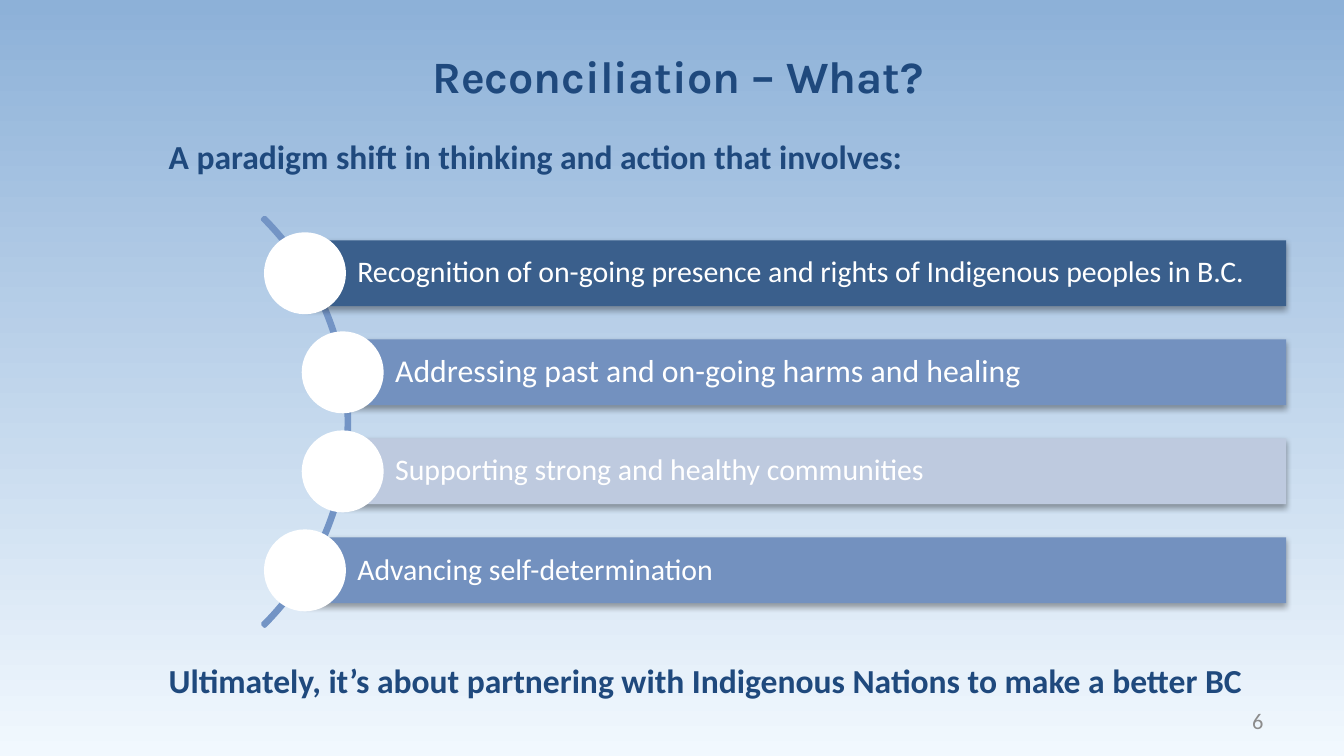
from dataclasses import dataclass

import lxml.etree
import pptx
import pptx.dml.color
import pptx.enum.shapes
import pptx.enum.text
import pptx.oxml.ns
import pptx.util

Align = pptx.enum.text.PP_ALIGN
Anchor = pptx.enum.text.MSO_ANCHOR
Preset = pptx.enum.shapes.MSO_SHAPE


@dataclass(frozen=True)
class Theme:
    width: float = 10
    height: float = 10 * 9 / 16
    sky: tuple = ("8DB1D8", "F1F8FE")
    navy: str = "1F497D"
    arc: str = "7394C5"
    dark_bar: str = "3A5F8C"
    medium_bar: str = "7391BF"
    light_bar: str = "BECADF"
    white: str = "FFFFFF"
    gray: str = "8C8C8C"
    title_font: str = "Karla"
    body_font: str = "Calibri"
    title_size: int = 24
    statement_size: int = 18
    large_bar_size: int = 17
    bar_size: int = 16
    number_size: int = 12


@dataclass(frozen=True)
class Box:
    """Percentages of the slide's width and height."""
    left: float
    top: float
    width: float
    height: float

    def lengths(self) -> list:
        sides = (THEME.width, THEME.height) * 2
        shares = (self.left, self.top, self.width, self.height)
        return [pptx.util.Inches(share * side / 100) for share, side in zip(shares, sides)]


@dataclass(frozen=True)
class Step:
    text: str
    left: float
    color: str
    size: int


THEME = Theme()
ARC_CENTER_X, CENTER_Y = 4.5, 55.8
ARC_DIAMETER, CIRCLE_DIAMETER = 43, 6.1
ROW_PITCH, BAR_HEIGHT = 13.1, 8.72
BAR_RIGHT = 95.7
OUTER_LEFT, INNER_LEFT = 22.69, 25.5

STEPS = (
    Step("Recognition of on-going presence and rights of Indigenous peoples in B.C.",
         OUTER_LEFT, THEME.dark_bar, THEME.bar_size),
    Step("Addressing past and on-going harms and healing",
         INNER_LEFT, THEME.medium_bar, THEME.large_bar_size),
    Step("Supporting strong and healthy communities",
         INNER_LEFT, THEME.light_bar, THEME.bar_size),
    Step("Advancing self-determination",
         OUTER_LEFT, THEME.medium_bar, THEME.bar_size),
)


def rgb(color: str) -> pptx.dml.color.RGBColor:
    return pptx.dml.color.RGBColor.from_string(color)


def round_box(center_x: float, center_y: float, diameter: float) -> Box:
    height = diameter * THEME.width / THEME.height
    return Box(center_x - diameter / 2, center_y - height / 2, diameter, height)


def write_text(shape, text: str, *, size: int, color: str, font: str = THEME.body_font,
               bold: bool = False, align=Align.LEFT, anchor=Anchor.TOP,
               margins: tuple = (0.1, 0.05, 0.1, 0.05), line_spacing: float = 1.0) -> None:
    frame = shape.text_frame
    frame.word_wrap = True
    frame.vertical_anchor = anchor
    (frame.margin_left, frame.margin_top,
     frame.margin_right, frame.margin_bottom) = map(pptx.util.Inches, margins)
    paragraph = frame.paragraphs[0]
    paragraph.alignment = align
    paragraph.line_spacing = line_spacing
    run = paragraph.add_run()
    run.text = text
    run.font.name = font
    run.font.size = pptx.util.Pt(size)
    run.font.bold = bold
    run.font.color.rgb = rgb(color)


def add_text(slide, box: Box, text: str, **text_format) -> None:
    write_text(slide.shapes.add_textbox(*box.lengths()), text, **text_format)


def add_filled_shape(slide, preset, box: Box, color: str):
    shape = slide.shapes.add_shape(preset, *box.lengths())
    shape.shadow.inherit = False
    shape.fill.solid()
    shape.fill.fore_color.rgb = rgb(color)
    shape.line.fill.background()
    return shape


def add_soft_shadow(shape) -> None:
    qualify = pptx.oxml.ns.qn
    effects = shape._element.spPr.find(qualify("a:effectLst"))
    shadow = lxml.etree.SubElement(
        effects, qualify("a:outerShdw"), blurRad=str(pptx.util.Pt(3.1)),
        dist=str(pptx.util.Pt(1.8)), dir="5400000", rotWithShape="0")
    color = lxml.etree.SubElement(shadow, qualify("a:srgbClr"), val="000000")
    lxml.etree.SubElement(color, qualify("a:alpha"), val="35000")


def paint_background(slide) -> None:
    fill = slide.background.fill
    fill.gradient()
    fill.gradient_angle = 270
    for stop, position, color in zip(fill.gradient_stops, (0, 1), THEME.sky):
        stop.position = position
        stop.color.rgb = rgb(color)


def add_arc(slide) -> None:
    box = round_box(ARC_CENTER_X, CENTER_Y, ARC_DIAMETER)
    arc = slide.shapes.add_shape(Preset.BLOCK_ARC, *box.lengths())
    arc.shadow.inherit = False
    arc.fill.background()
    arc.line.color.rgb = rgb(THEME.arc)
    arc.line.width = pptx.util.Pt(2)
    for index, value in enumerate((189, 27, 0.005)):
        arc.adjustments[index] = value


def add_step(slide, step: Step, row: int) -> None:
    middle = CENTER_Y + (row - (len(STEPS) - 1) / 2) * ROW_PITCH
    box = Box(step.left, middle - BAR_HEIGHT / 2, BAR_RIGHT - step.left, BAR_HEIGHT)
    bar = add_filled_shape(slide, Preset.RECTANGLE, box, step.color)
    add_soft_shadow(bar)
    write_text(bar, step.text, size=step.size, color=THEME.white, anchor=Anchor.MIDDLE,
               margins=(0.39, 0.04, 0.04, 0.04), line_spacing=0.9)
    add_filled_shape(slide, Preset.OVAL, round_box(step.left, middle, CIRCLE_DIAMETER),
                     THEME.white)


def main() -> None:
    presentation = pptx.Presentation()
    presentation.slide_width = pptx.util.Inches(THEME.width)
    presentation.slide_height = pptx.util.Inches(THEME.height)
    slide = presentation.slides.add_slide(presentation.slide_layouts[6])

    paint_background(slide)
    add_text(slide, Box(7.35, 7.3, 86.2, 8.19), "Reconciliation – What?",
             size=THEME.title_size, color=THEME.navy, font=THEME.title_font, bold=True,
             align=Align.CENTER, margins=(0, 0, 0, 0), line_spacing=0.9)
    add_arc(slide)
    for row, step in enumerate(STEPS):
        add_step(slide, step, row)

    statements = (
        (Box(9.85, 17.07, 85.1, 7.12), "A paradigm shift in thinking and action that involves:"),
        (Box(9.85, 86.4, 83.7, 7.12),
         "Ultimately, it’s about partnering with Indigenous Nations to make a better BC"),
    )
    for box, text in statements:
        add_text(slide, box, text, size=THEME.statement_size, color=THEME.navy, bold=True,
                 margins=(0.27, 0.05, 0.1, 0.05))
    add_text(slide, Box(71.7, 92.7, 23.3, 5.32), "6", size=THEME.number_size,
             color=THEME.gray, align=Align.RIGHT, anchor=Anchor.MIDDLE)
    presentation.save("out.pptx")


if __name__ == "__main__":
    main()
